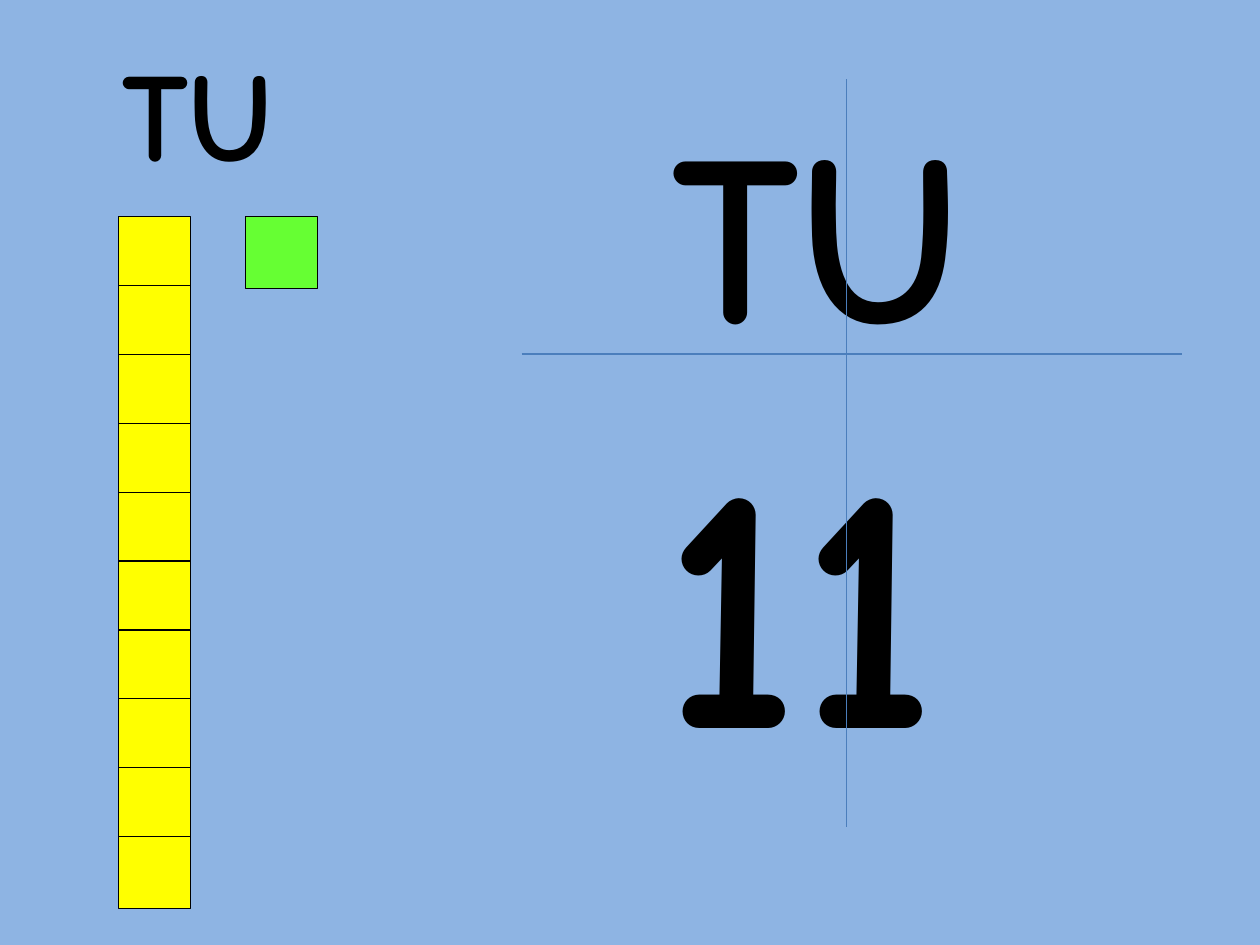
from dataclasses import dataclass

from lxml import etree
from pptx import Presentation
from pptx.dml.color import RGBColor
from pptx.enum import shapes, text
from pptx.oxml import ns
from pptx.util import Inches, Pt


@dataclass(frozen=True)
class Theme:
    background: RGBColor = RGBColor(0x8E, 0xB4, 0xE3)
    ink: RGBColor = RGBColor(0, 0, 0)
    tens: RGBColor = RGBColor(0xFF, 0xFF, 0)
    units: RGBColor = RGBColor(0x66, 0xFF, 0x33)
    grid: RGBColor = RGBColor(0x4B, 0x7E, 0xBC)
    font: str = "Comic Neue"
    label_size: float = 72
    heading_size: float = 138
    number_size: float = 199
    line_width: float = 0.75


@dataclass(frozen=True)
class Lettering:
    words: str
    left: float
    top: float
    width: float
    height: float
    size: float


@dataclass(frozen=True)
class GridLine:
    start: tuple[float, float]
    end: tuple[float, float]


THEME = Theme()
BLOCK_SIDE = 0.57
BLOCK_TOP = 1.72
TENS_LEFT = 0.94
UNITS_LEFT = 1.95
TENS_COUNT = 10
TENS_STEP = (6.64 - BLOCK_TOP) / (TENS_COUNT - 1)

HEADING = Lettering("TU", 5.24, 0.6, 5.78, 2.42, THEME.heading_size)
NUMBER = Lettering("11", 5.16, 2.97, 3.75, 3.45, THEME.number_size)
LABEL = Lettering("TU", 0.87, 0.23, 5.78, 1.31, THEME.label_size)
GRID_LINES = (
    GridLine((6.72, 0.63), (6.72, 6.56)),
    GridLine((4.14, 2.81), (9.38, 2.81)),
)


def draw_block(container, left: float, top: float, fill: RGBColor) -> None:
    block = container.add_shape(
        shapes.MSO_SHAPE.RECTANGLE,
        Inches(left), Inches(top), Inches(BLOCK_SIDE), Inches(BLOCK_SIDE),
    )
    block.shadow.inherit = False
    block.fill.solid()
    block.fill.fore_color.rgb = fill
    block.line.color.rgb = THEME.ink
    block.line.width = Pt(THEME.line_width)


def write_lettering(box, lettering: Lettering) -> None:
    box.left, box.top = Inches(lettering.left), Inches(lettering.top)
    box.width, box.height = Inches(lettering.width), Inches(lettering.height)
    frame = box.text_frame
    frame.text = lettering.words
    frame.word_wrap = True
    frame.auto_size = text.MSO_AUTO_SIZE.SHAPE_TO_FIT_TEXT
    frame.vertical_anchor = text.MSO_ANCHOR.TOP
    para = frame.paragraphs[0]
    para.alignment = text.PP_ALIGN.LEFT
    para.font.name = THEME.font
    para.font.size = Pt(lettering.size)
    para.font.bold = True
    para.font.color.rgb = THEME.ink


def draw_grid_line(page, grid_line: GridLine) -> None:
    ends = [Inches(value) for value in grid_line.start + grid_line.end]
    line = page.shapes.add_connector(shapes.MSO_CONNECTOR.STRAIGHT, *ends)
    line.line.color.rgb = THEME.grid
    line.line.width = Pt(THEME.line_width)
    etree.SubElement(line._element.spPr, ns.qn("a:effectLst"))


def main() -> None:
    deck = Presentation()
    deck.slide_width, deck.slide_height = Inches(10), Inches(7.5)
    page = deck.slides.add_slide(deck.slide_layouts.get_by_name("Title Only"))
    page.background.fill.solid()
    page.background.fill.fore_color.rgb = THEME.background

    write_lettering(page.shapes.title, HEADING)
    tens = page.shapes.add_group_shape()
    for index in range(TENS_COUNT):
        draw_block(tens.shapes, TENS_LEFT, BLOCK_TOP + index * TENS_STEP, THEME.tens)
    draw_block(page.shapes, UNITS_LEFT, BLOCK_TOP, THEME.units)
    for lettering in (NUMBER, LABEL):
        write_lettering(page.shapes.add_textbox(0, 0, 0, 0), lettering)
    for grid_line in GRID_LINES:
        draw_grid_line(page, grid_line)

    deck.save("out.pptx")


if __name__ == "__main__":
    main()
